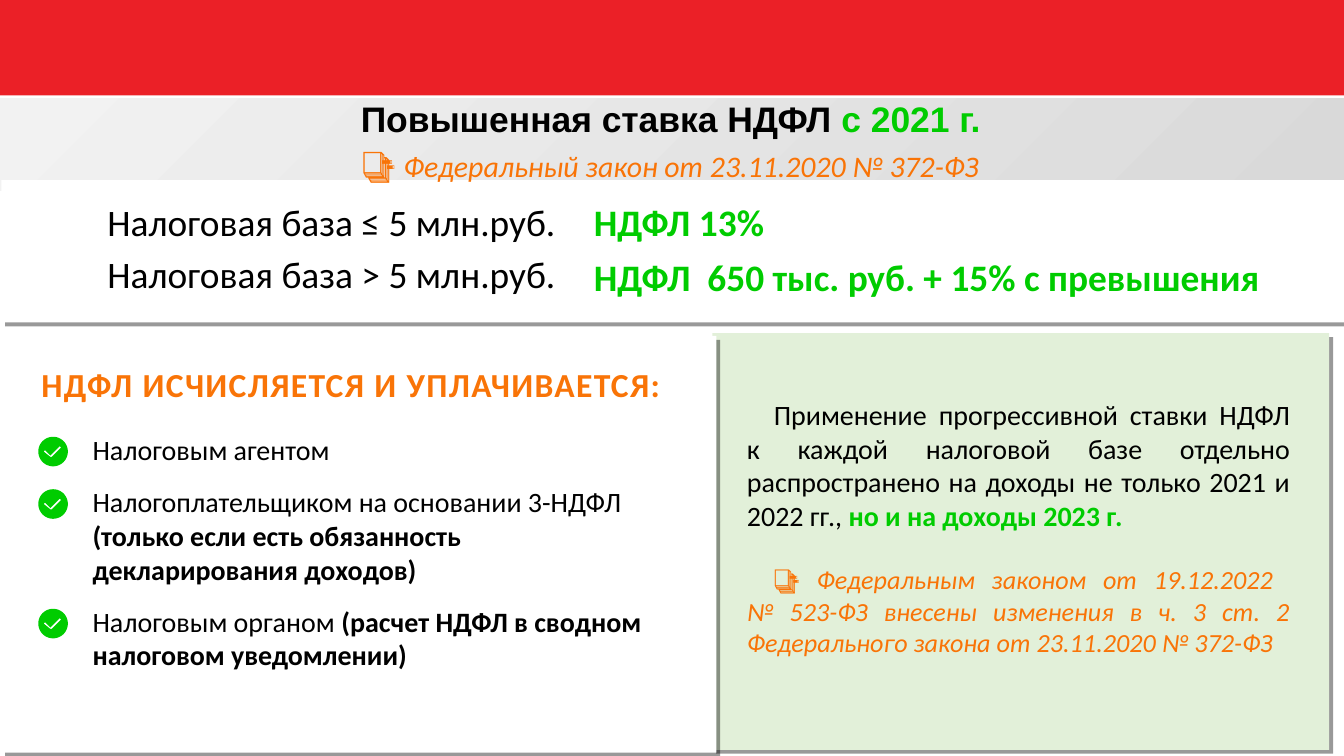
from math import cos, pi, sin

from pptx import Presentation
from pptx.dml.color import RGBColor
from pptx.enum.shapes import MSO_SHAPE as Kind
from pptx.enum.text import MSO_ANCHOR as Anchor, PP_ALIGN as Align
from pptx.oxml import parse_xml
from pptx.oxml.ns import nsdecls, qn
from pptx.util import Inches, Pt

RED = RGBColor(0xEB, 0x20, 0x27)
GREEN = RGBColor(0x00, 0xCC, 0x00)
ORANGE = RGBColor(0xF9, 0x74, 0x07)
BLACK = RGBColor(0x00, 0x00, 0x00)
WHITE = RGBColor(0xFF, 0xFF, 0xFF)
MINT = RGBColor(0xE2, 0xF0, 0xD9)
DARK = RGBColor(0xD9, 0xD9, 0xD9)
LIGHT = RGBColor(0xF2, 0xF2, 0xF2)

SHADE = (
    f'<a:effectLst {nsdecls("a")}>'
    '<a:outerShdw blurRad="0" dist="38100" dir="2700000" algn="tl" rotWithShape="0">'
    '<a:srgbClr val="000000"><a:alpha val="40000"/></a:srgbClr>'
    '</a:outerShdw></a:effectLst>'
)
FOCUS = (
    f'<a:path {nsdecls("a")} path="circle">'
    '<a:fillToRect l="100000" t="100000"/></a:path>'
)

deck = Presentation()
deck.slide_width, deck.slide_height = Inches(10), Inches(5.625)
slide = deck.slides.add_slide(deck.slide_layouts[5])
shapes = slide.shapes
title = shapes.title


def panel(at, color, shade=False):
    shape = shapes.add_shape(Kind.RECTANGLE, *[Inches(v) for v in at])
    shape.shadow.inherit = False
    shape.fill.solid()
    shape.fill.fore_color.rgb = color
    shape.line.fill.background()
    if shade:
        props = shape._element.spPr
        props.remove(props.find(qn("a:effectLst")))
        props.append(parse_xml(SHADE))
    return shape


def write(box, paras, align=Align.LEFT, font="Calibri", gap=0, lead=1.0):
    frame = box.text_frame
    frame.word_wrap = True
    for i, runs in enumerate(paras):
        para = frame.paragraphs[0] if i == 0 else frame.add_paragraph()
        para.alignment = align
        para.line_spacing = lead
        para.space_before = Pt(0)
        para.space_after = Pt(gap)
        for words, size, color, style in runs:
            for j, part in enumerate(words.split("\n")):
                if j:
                    para.add_line_break()
                run = para.add_run()
                run.text = part
                run.font.name = font
                run.font.size = Pt(size)
                run.font.color.rgb = color
                run.font.bold = "b" in style
                run.font.italic = "i" in style
    return frame


panel((5.3, 2.48, 4.59, 3.1), MINT, True)
panel((0.01, 2.5, 5.32, 3.1), WHITE, True)

band = panel((0, 0.73, 10, 0.69), LIGHT)
band.fill.gradient()
for stop, color, spot in zip(band.fill.gradient_stops, (DARK, LIGHT), (0, 1)):
    stop.color.rgb = color
    stop.position = spot
grad = band._element.spPr.find(qn("a:gradFill"))
grad.replace(grad.find(qn("a:lin")), parse_xml(FOCUS))

shapes._spTree.append(title._element)
title.left, title.top = Inches(0.05), Inches(0.66)
title.width, title.height = Inches(9.88), Inches(0.48)
frame = write(title, [[("Повышенная ставка НДФЛ ", 19, BLACK, "b"),
                       ("с 2021 г.", 19, GREEN, "b")]],
              Align.CENTER, "Arial", lead=0.9)
frame.vertical_anchor = Anchor.MIDDLE

panel((0.01, 1.34, 9.99, 1.06), WHITE, True)

bases = [(1.51, "Налоговая база ≤ 5 млн.руб."),
         (1.89, "Налоговая база > 5 млн.руб.")]
for top, words in bases:
    box = shapes.add_textbox(Inches(0.73), Inches(top), Inches(4.26), Inches(0.35))
    frame = write(box, [[(words, 20, BLACK, "")]], lead=0.8)
    frame.margin_left = frame.margin_right = Inches(0.07)
    frame.margin_top = frame.margin_bottom = Inches(0.04)

rates = [(1.43, 3.13, "НДФЛ 13%"),
         (1.84, 5.31, "НДФЛ  650 тыс. руб. + 15% с превышения")]
for top, width, words in rates:
    box = shapes.add_textbox(Inches(4.32), Inches(top), Inches(width), Inches(0.44))
    write(box, [[(words, 20, GREEN, "b")]])

box = shapes.add_textbox(Inches(0.21), Inches(2.66), Inches(7.09), Inches(0.4))
frame = write(box, [[("НДФЛ ИСЧИСЛЯЕТСЯ И УПЛАЧИВАЕТСЯ:", 18, ORANGE, "b")]])
frame.paragraphs[0].runs[0].font._element.set("spc", "75")

box = shapes.add_textbox(Inches(0.59), Inches(3.17), Inches(4.42), Inches(1.9))
write(box, [
    [("Налоговым агентом", 15, BLACK, "")],
    [("Налогоплательщиком на основании 3-НДФЛ ", 15, BLACK, ""),
     ("(только если есть обязанность декларирования доходов)", 15, BLACK, "b")],
    [("Налоговым органом ", 15, BLACK, ""),
     ("(расчет НДФЛ в сводном налоговом уведомлении)", 15, BLACK, "b")],
], gap=10)

box = shapes.add_textbox(Inches(5.46), Inches(2.91), Inches(4.24), Inches(2.05))
frame = write(box, [
    [("Применение прогрессивной ставки НДФЛ к каждой налоговой базе отдельно "
      "распространено на доходы не только 2021 и 2022 гг., ", 15, BLACK, ""),
     ("но и на доходы 2023 г.", 15, GREEN, "b")],
    [("📑 ", 14, ORANGE, ""),
     ("Федеральным законом от 19.12.2022 \n№ 523-ФЗ внесены изменения в ч. 3 ст. 2 "
      "Федерального закона от 23.11.2020 № 372-ФЗ", 14, ORANGE, "i")],
], Align.JUSTIFY)
for para in frame.paragraphs:
    props = para._p.get_or_add_pPr()
    props.set("marL", "0")
    props.set("indent", str(Inches(0.2)))
frame.paragraphs[1].space_before = Pt(17)

box = shapes.add_textbox(Inches(-0.01), Inches(1.02), Inches(10), Inches(0.4))
write(box, [[("📑 ", 18, ORANGE, ""),
             ("Федеральный закон от 23.11.2020 № 372-ФЗ", 16, ORANGE, "i")]],
      Align.CENTER)

turns = [2 * pi * i / 48 for i in range(48)]
ring = [(0.11 + 0.11 * cos(t), 0.11 + 0.11 * sin(t)) for t in turns]
tick = [(0.1, 0.15), (0.17, 0.08), (0.16, 0.07), (0.09, 0.14),
        (0.05, 0.1), (0.04, 0.11), (0.09, 0.15)]
for top in (3.25, 3.64, 4.53):
    disc, hole = [[(Inches(0.285 + x), Inches(top + y)) for x, y in part]
                  for part in (ring, tick)]
    pen = shapes.build_freeform(*disc[0])
    pen.add_line_segments(disc[1:])
    pen.move_to(*hole[0])
    pen.add_line_segments(hole[1:])
    mark = pen.convert_to_shape()
    mark.shadow.inherit = False
    mark.fill.solid()
    mark.fill.fore_color.rgb = GREEN
    mark.line.fill.background()

panel((0, 0, 10, 0.71), RED)

deck.save("out.pptx")
